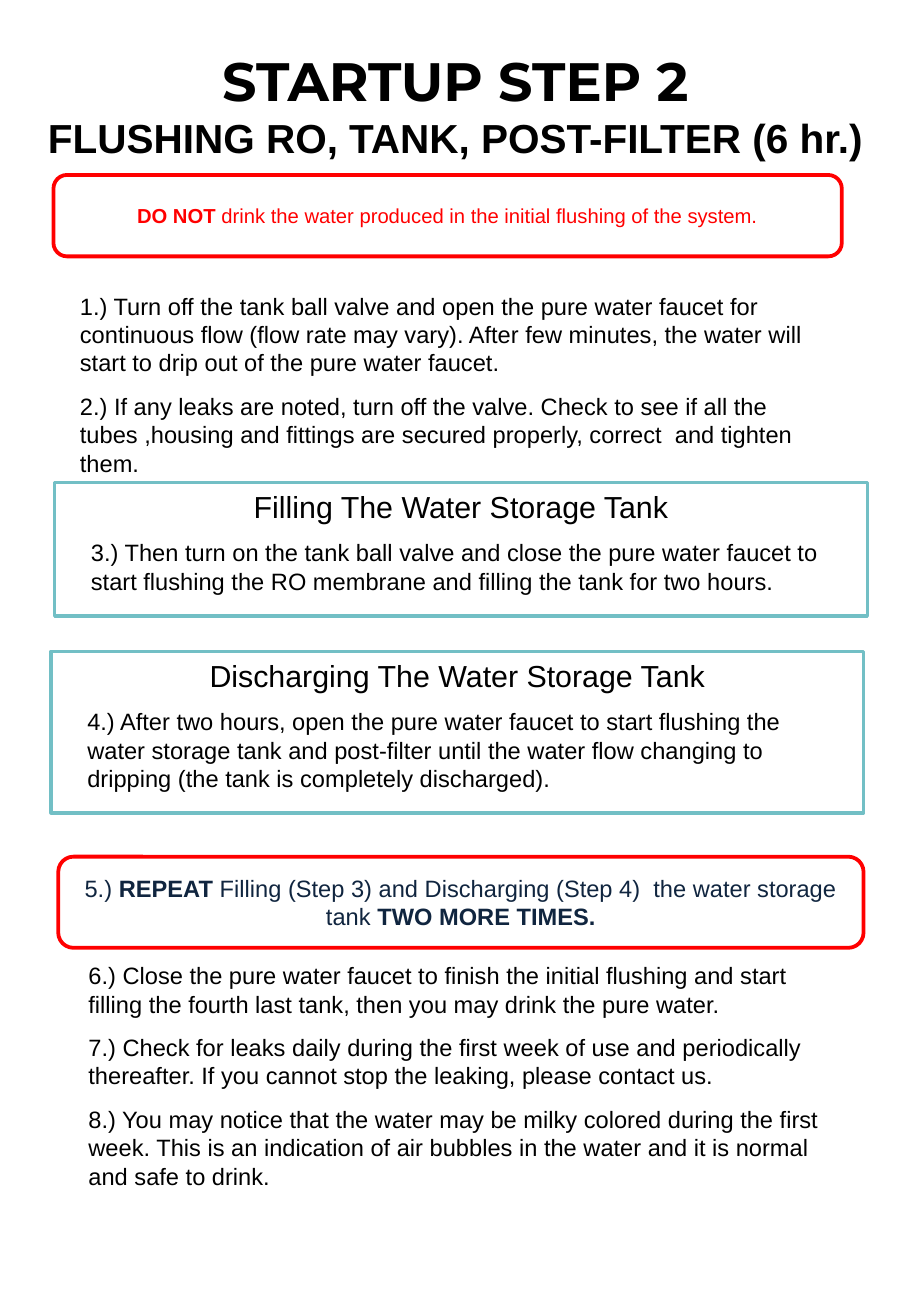
import pptx
import pptx.util
import pptx.dml.color
import pptx.enum.shapes
import pptx.enum.text

Pt = pptx.util.Pt
RGBColor = pptx.dml.color.RGBColor
SHAPE = pptx.enum.shapes.MSO_SHAPE
ALIGN = pptx.enum.text.PP_ALIGN
ANCHOR = pptx.enum.text.MSO_ANCHOR

BLACK = RGBColor(0, 0, 0)
RED = RGBColor(255, 0, 0)
NAVY = RGBColor(0x10, 0x25, 0x3F)
TEAL = RGBColor(0x72, 0xBF, 0xC5)

# Places are left, top, width, height in cells of a 75-column grid.
COLS, ROWS = 75, 108.3
CELL = pptx.util.Inches(0.1)

TITLE = ["STARTUP STEP 2", "FLUSHING RO, TANK, POST-FILTER (6 hr.)"]
TITLE_FONTS = [("Montserrat", 32), ("Arial", 24)]

# Alerts: place, size, colour, runs of (text, bold)
ALERTS = [
    ((4.4, 14.4, 64.9, 6.7), 12, RED, [
        ("DO NOT ", True),
        ("drink the water produced in the initial flushing of the system.", False)]),
    ((4.8, 70.5, 66.3, 7.5), 14, NAVY, [
        ("5.) ", False), ("REPEAT ", True),
        ("Filling (Step 3) and Discharging (Step 4)  the water storage tank ", False),
        ("TWO MORE TIMES.", True)]),
]

STEPS = [
    ((5.6, 23.5, 63.7, 14.2), [
        "1.) Turn off the tank ball valve and open the pure water faucet for continuous flow "
        "(flow rate may vary). After few minutes, the water will start to drip out of the pure "
        "water faucet.",
        "2.) If any leaks are noted, turn off the valve. Check to see if all the tubes ,housing "
        "and fittings are secured properly, correct  and tighten them."]),
    ((6.3, 78.6, 63.7, 19.7), [
        "6.) Close the pure water faucet to finish the initial flushing and start filling the "
        "fourth last tank, then you may drink the pure water.",
        "7.) Check for leaks daily during the first week of use and periodically thereafter. "
        "If you cannot stop the leaking, please contact us.",
        "8.) You may notice that the water may be milky colored during the first week. This is "
        "an indication of air bubbles in the water and it is normal and safe to drink."]),
]

# Panels: place, heading, step
PANELS = [
    ((4.5, 39.7, 66.9, 11), "Filling The Water Storage Tank",
     "3.) Then turn on the tank ball valve and close the pure water faucet to start flushing "
     "the RO membrane and filling the tank for two hours."),
    ((4.2, 53.6, 66.9, 13.3), "Discharging The Water Storage Tank",
     "4.) After two hours, open the pure water faucet to start flushing the water storage tank "
     "and post-filter until the water flow changing to dripping (the tank is completely "
     "discharged)."),
]


def span(place):
    return [round(cells * CELL) for cells in place]


def style(run, size, color=BLACK, bold=False, face="Arial"):
    font = run.font
    font.name, font.size, font.bold = face, Pt(size), bold
    font.color.rgb = color


def add_text(shapes, place, lines, size=14, align=ALIGN.LEFT, before=9):
    frame = shapes.add_textbox(*span(place)).text_frame
    frame.word_wrap = True
    frame.text = "\n".join(lines)
    for para in frame.paragraphs:
        para.alignment = align
        para.space_before = Pt(before)
        style(para.runs[0], size)
    return frame


def add_frame(shapes, kind, place, color, width):
    """Add an unfilled outline."""
    box = shapes.add_shape(kind, *span(place))
    box.shadow.inherit = False
    box.fill.background()
    box.line.color.rgb = color
    box.line.width = Pt(width)
    return box


def add_alert(shapes, place, size, color, parts):
    box = add_frame(shapes, SHAPE.ROUNDED_RECTANGLE, place, color=RED, width=2.25)
    frame = box.text_frame
    frame.word_wrap = True
    frame.vertical_anchor = ANCHOR.MIDDLE
    para = frame.paragraphs[0]
    para.alignment = ALIGN.CENTER
    for text, bold in parts:
        run = para.add_run()
        run.text = text
        style(run, size, color, bold)


def add_panel(shapes, place, heading, step):
    left, top, width, height = place
    group = shapes.add_group_shape().shapes
    add_frame(group, SHAPE.RECTANGLE, place, TEAL, 2)
    add_text(group, (left + 0.2, top, width - 0.4, 4), [heading], 18, ALIGN.CENTER, 0)
    add_text(group, (left + 2, top + 4.1, width - 3.4, height - 5.2), [step])


def main():
    deck = pptx.Presentation()
    deck.slide_width, deck.slide_height = span((COLS, ROWS))
    shapes = deck.slides.add_slide(deck.slide_layouts[6]).shapes

    title = add_text(shapes, (0, 3.2, COLS, 10.8), TITLE, align=ALIGN.CENTER, before=0)
    title.vertical_anchor = ANCHOR.MIDDLE
    for para, (face, size) in zip(title.paragraphs, TITLE_FONTS):
        para.space_after = Pt(0.6)
        style(para.runs[0], size, bold=True, face=face)

    for place, lines in STEPS:
        add_text(shapes, place, lines)
    for panel in PANELS:
        add_panel(shapes, *panel)
    for alert in ALERTS:
        add_alert(shapes, *alert)
    deck.save("out.pptx")


if __name__ == "__main__":
    main()
